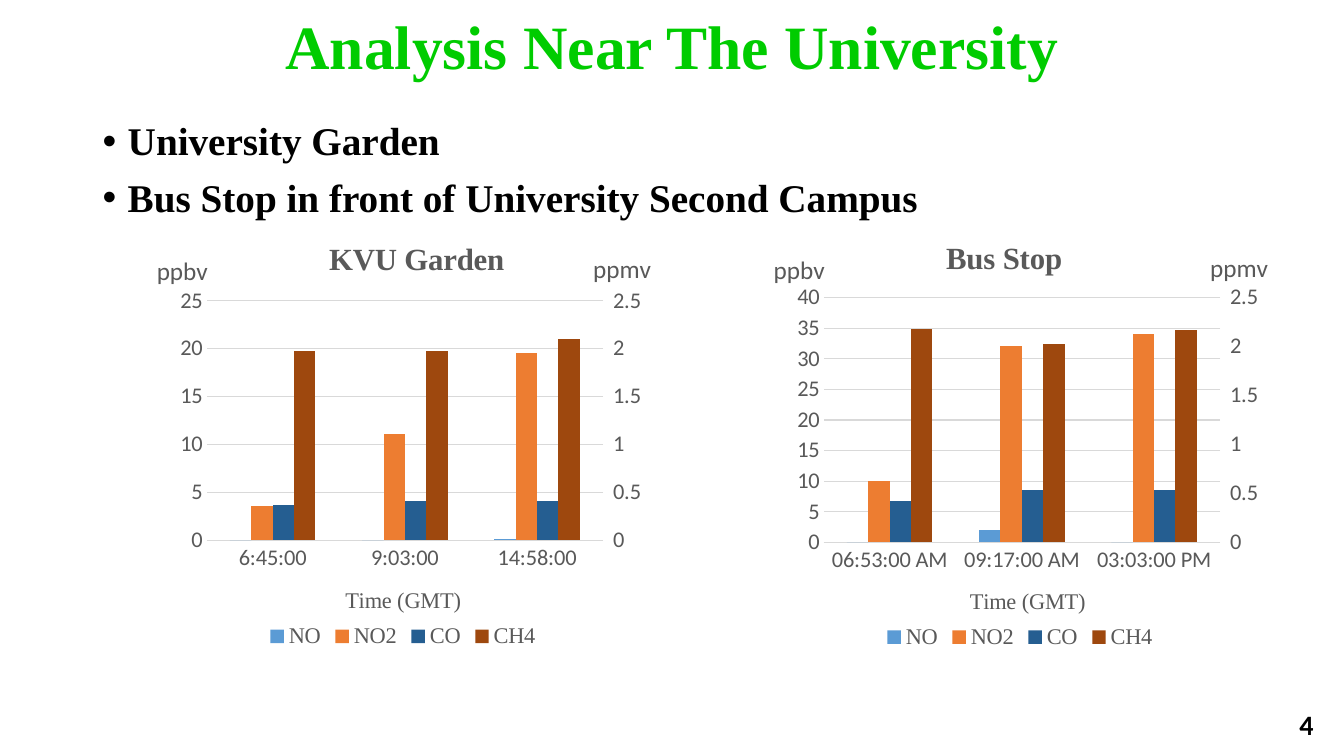
"""Build the slide comparing air pollution at two places near the university."""
import copy
import dataclasses

import pptx
import pptx.chart.axis
import pptx.chart.data
import pptx.dml.color
import pptx.enum.chart
import pptx.enum.text
import pptx.oxml
import pptx.oxml.ns
import pptx.util

Pt = pptx.util.Pt
qn = pptx.oxml.ns.qn
ALIGN = pptx.enum.text.PP_ALIGN
ANCHOR = pptx.enum.text.MSO_ANCHOR
TICK = pptx.enum.chart.XL_TICK_MARK


@dataclasses.dataclass(frozen=True)
class Theme:
    heading: str = "00CC00"
    ink: str = "000000"
    muted: str = "595959"
    rule: str = "D9D9D9"
    serif: str = "Times New Roman"
    sans: str = "Calibri"
    title: int = 44
    body: int = 28
    chart_title: int = 22
    number: int = 20
    unit: int = 18
    label: int = 16


SERIES = {
    "NO": "5B9BD5", "NO2": "ED7D31", "Series 3": "A5A5A5", "Series 4": "FFC000",
    "Series 5": "4472C4", "Series 6": "70AD47", "CO": "255E91", "CH4": "9E480E",
}
SPACERS = range(2, 6)
RIGHT_FROM = 4


def rgb(color):
    return pptx.dml.color.RGBColor.from_string(color)


def set_font(font, size, name, color, bold=False):
    font.size, font.name, font.bold = Pt(size), name, bold
    font.color.rgb = rgb(color)


def write(p, text, *, size, font, color, bold=False, align=None, spacing=None):
    r = p.add_run()
    r.text = text
    set_font(r.font, size, font, color, bold)
    if align is not None:
        p.alignment = align
    if spacing is not None:
        p.line_spacing = spacing


def element(tag, **attributes):
    e = pptx.oxml.parse_xml(f"<{tag} {pptx.oxml.ns.nsdecls('a', 'c')}/>")
    for key, value in attributes.items():
        e.set(key, str(value))
    return e


def layout(**values):
    e, manual = element("c:layout"), element("c:manualLayout")
    e.append(manual)
    for key, value in values.items():
        manual.append(element(f"c:{key}", val=value))
    return e


def drop(parent, *tags):
    for tag in tags:
        for child in parent.findall(qn(tag)):
            parent.remove(child)


class Deck:
    def __init__(self, theme):
        self.theme = theme
        self.prs = pptx.Presentation()
        self.prs.slide_width, self.prs.slide_height = Pt(960), Pt(540)
        self.s = self.prs.slides.add_slide(self.prs.slide_layouts[6])

    def text(self, box, lines, anchor=ANCHOR.TOP, bullet=None, **style):
        tf = self.s.shapes.add_textbox(*map(Pt, box)).text_frame
        tf.word_wrap, tf.vertical_anchor = True, anchor
        for i, line in enumerate(lines):
            p = tf.paragraphs[0] if i == 0 else tf.add_paragraph()
            if bullet:
                pPr = p._p.get_or_add_pPr()
                pPr.set("marL", str(Pt(18)))
                pPr.set("indent", str(-Pt(18)))
                pPr.append(element("a:buFont", typeface="Arial"))
                pPr.append(element("a:buChar", char=bullet))
            if i:
                p.space_before = Pt(10)
            write(p, line, **style)

    def place_title(self, title, text, x, y, size, font, bold=False):
        write(title.text_frame.paragraphs[0], text, size=size, font=font,
              color=self.theme.muted, bold=bold)
        e = title._element
        drop(e, "c:layout")
        e.find(qn("c:tx")).addnext(layout(xMode="edge", yMode="edge", x=x, y=y))
        body = e.find(".//" + qn("a:bodyPr"))
        body.set("rot", "0")
        body.set("vert", "horz")

    def style_axis(self, axis, line=None):
        set_font(axis.tick_labels.font, self.theme.label, self.theme.sans, self.theme.muted)
        axis.major_tick_mark = axis.minor_tick_mark = TICK.NONE
        if line:
            axis.format.line.color.rgb = rgb(line)
            axis.format.line.width = Pt(0.75)
        else:
            axis.format.line.fill.background()

    def scale(self, axis, top, step):
        axis.minimum_scale, axis.maximum_scale, axis.major_unit = 0, top, step
        axis.tick_labels.number_format = "General"
        axis.tick_labels.number_format_is_linked = False

    def split_axes(self, area):
        left = area.find(qn("c:barChart"))
        right = copy.deepcopy(left)
        for i, (a, b) in enumerate(zip(left.findall(qn("c:ser")), right.findall(qn("c:ser")))):
            if i < RIGHT_FROM:
                right.remove(b)
            else:
                left.remove(a)
        left.addnext(right)
        cat, val = area.find(qn("c:catAx")), area.find(qn("c:valAx"))
        cat2, val2 = copy.deepcopy(cat), copy.deepcopy(val)
        val.addnext(val2)
        val2.addnext(cat2)
        ids = ("50010", "50020")
        for e, value in zip(right.findall(qn("c:axId")), ids):
            e.set("val", value)
        for axis, own, other in ((cat2, *ids), (val2, *reversed(ids))):
            axis.find(qn("c:axId")).set("val", own)
            axis.find(qn("c:crossAx")).set("val", other)
        cat2.find(qn("c:delete")).set("val", "1")
        val2.find(qn("c:axPos")).set("val", "r")
        val2.find(qn("c:crosses")).set("val", "max")
        drop(val2, "c:majorGridlines")
        return pptx.chart.axis.ValueAxis(val2)

    def chart(self, box, title, times, readings, top, plot_y, plot_h, time_x):
        t = self.theme
        data = pptx.chart.data.CategoryChartData()
        data.categories = times
        for name in SERIES:
            data.add_series(name, readings.get(name, [None] * len(times)))
        kind = pptx.enum.chart.XL_CHART_TYPE.COLUMN_CLUSTERED
        chart = self.s.shapes.add_chart(kind, *map(Pt, box), data).chart
        set_font(chart.font, 10, t.sans, t.ink)
        plot = chart.plots[0]
        plot.gap_width, plot.overlap, plot.vary_by_categories = 219, 0, False
        for ser, color in zip(plot.series, SERIES.values()):
            ser.format.fill.solid()
            ser.format.fill.fore_color.rgb = rgb(color)

        cat, val = chart.category_axis, chart.value_axis
        self.style_axis(cat, t.rule)
        self.style_axis(val)
        self.scale(val, top, 5)
        val.major_gridlines.format.line.color.rgb = rgb(t.rule)
        val.major_gridlines.format.line.width = Pt(0.75)
        area = chart._chartSpace.chart.plotArea
        right = self.split_axes(area)
        self.scale(right, 2.5, 0.5)
        right.major_tick_mark = TICK.OUTSIDE
        drop(area, "c:layout")
        area.insert(0, layout(layoutTarget="inner", xMode="edge", yMode="edge",
                              x=0.108, y=plot_y, w=0.787, h=plot_h))

        self.place_title(chart.chart_title, title, 0.34, 0, t.chart_title, t.serif, True)
        self.place_title(cat.axis_title, "Time (GMT)", time_x, 0.816, t.label, t.serif)
        self.place_title(val.axis_title, "ppbv", 0, 0.035, t.unit, t.sans)
        self.place_title(right.axis_title, "ppmv", 0.866, 0.03, t.unit, t.sans)

        chart.has_legend = True
        legend = chart.legend
        legend.position = pptx.enum.chart.XL_LEGEND_POSITION.BOTTOM
        legend.include_in_layout = False
        set_font(legend.font, t.label, t.serif, t.muted)
        drop(legend._element, "c:layout")
        position = legend._element.find(qn("c:legendPos"))
        position.addnext(layout(xMode="edge", yMode="edge", x=0.22, y=0.904))
        for i in reversed(SPACERS):
            entry = element("c:legendEntry")
            entry.extend([element("c:idx", val=i), element("c:delete", val=1)])
            position.addnext(entry)


def main():
    t = Theme()
    deck = Deck(t)
    deck.text((66.2, 0, 828, 70.6), ["Analysis Near The University"], ANCHOR.MIDDLE, size=t.title,
              font=t.serif, color=t.heading, bold=True, align=ALIGN.CENTER, spacing=0.9)
    deck.text((66.2, 83.5, 828, 82),
              ["University Garden", "Bus Stop in front of University Second Campus"],
              bullet="•", size=t.body, font=t.serif, color=t.ink, bold=True, spacing=0.9)
    deck.chart((108.7, 167, 360, 304.6), "KVU Garden", ["6:45:00", "9:03:00", "14:58:00"],
               {"NO": [0, 0, 0.1], "NO2": [3.6, 11.1, 19.5],
                "CO": [0.37, 0.41, 0.41], "CH4": [1.98, 1.98, 2.1]},
               top=25, plot_y=0.157, plot_h=0.562, time_x=0.375)
    deck.chart((549.4, 166.3, 360, 306), "Bus Stop", ["06:53:00 AM", "09:17:00 AM", "03:03:00 PM"],
               {"NO": [0, 2, 0], "NO2": [10, 32, 34],
                "CO": [0.42, 0.54, 0.54], "CH4": [2.18, 2.03, 2.17]},
               top=40, plot_y=0.151, plot_h=0.572, time_x=0.39)
    deck.text((729.4, 503.3, 216, 28.8), ["4"], ANCHOR.MIDDLE, size=t.number,
              font=t.sans, color=t.ink, bold=True, align=ALIGN.RIGHT)
    deck.prs.save("out.pptx")


if __name__ == "__main__":
    main()
